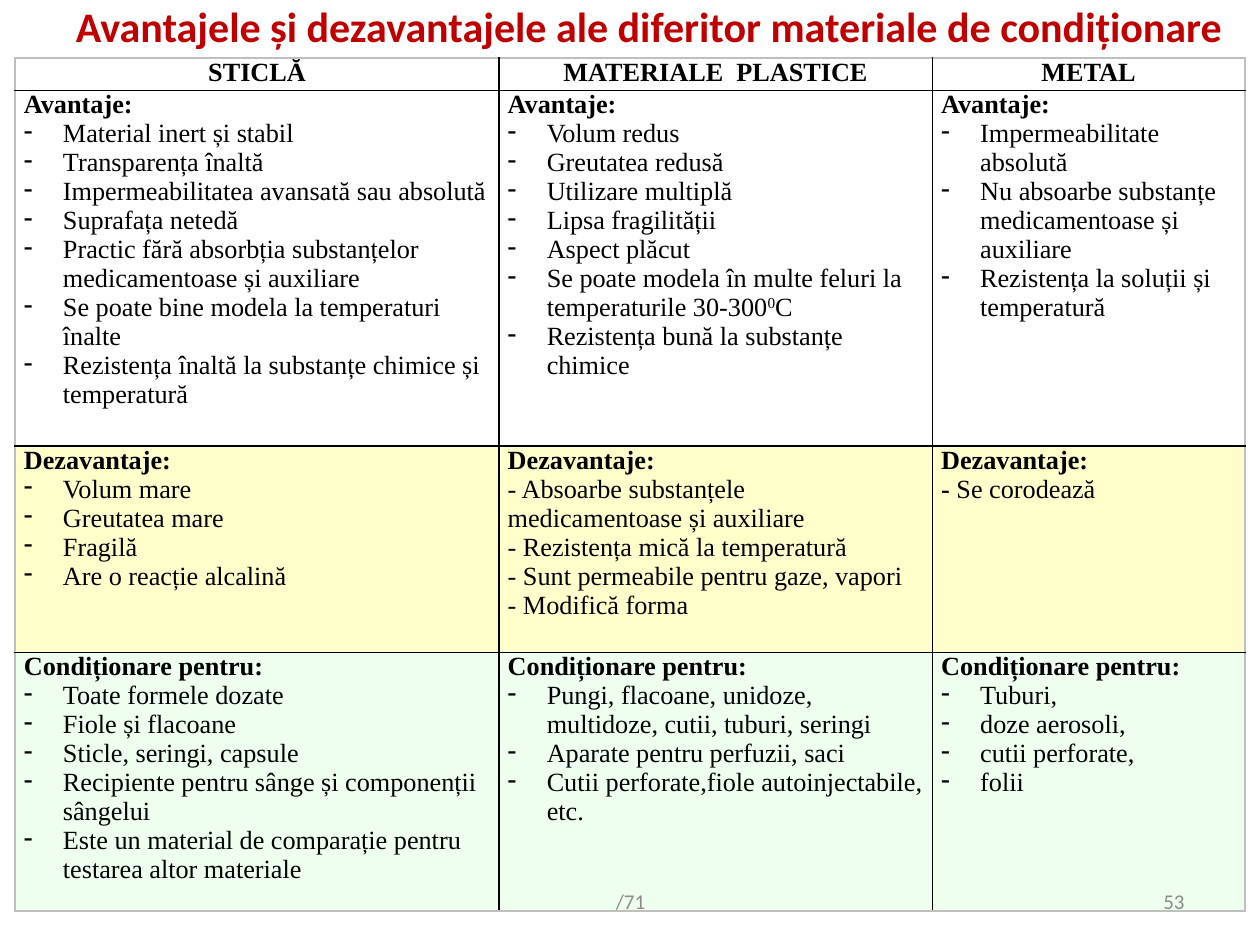
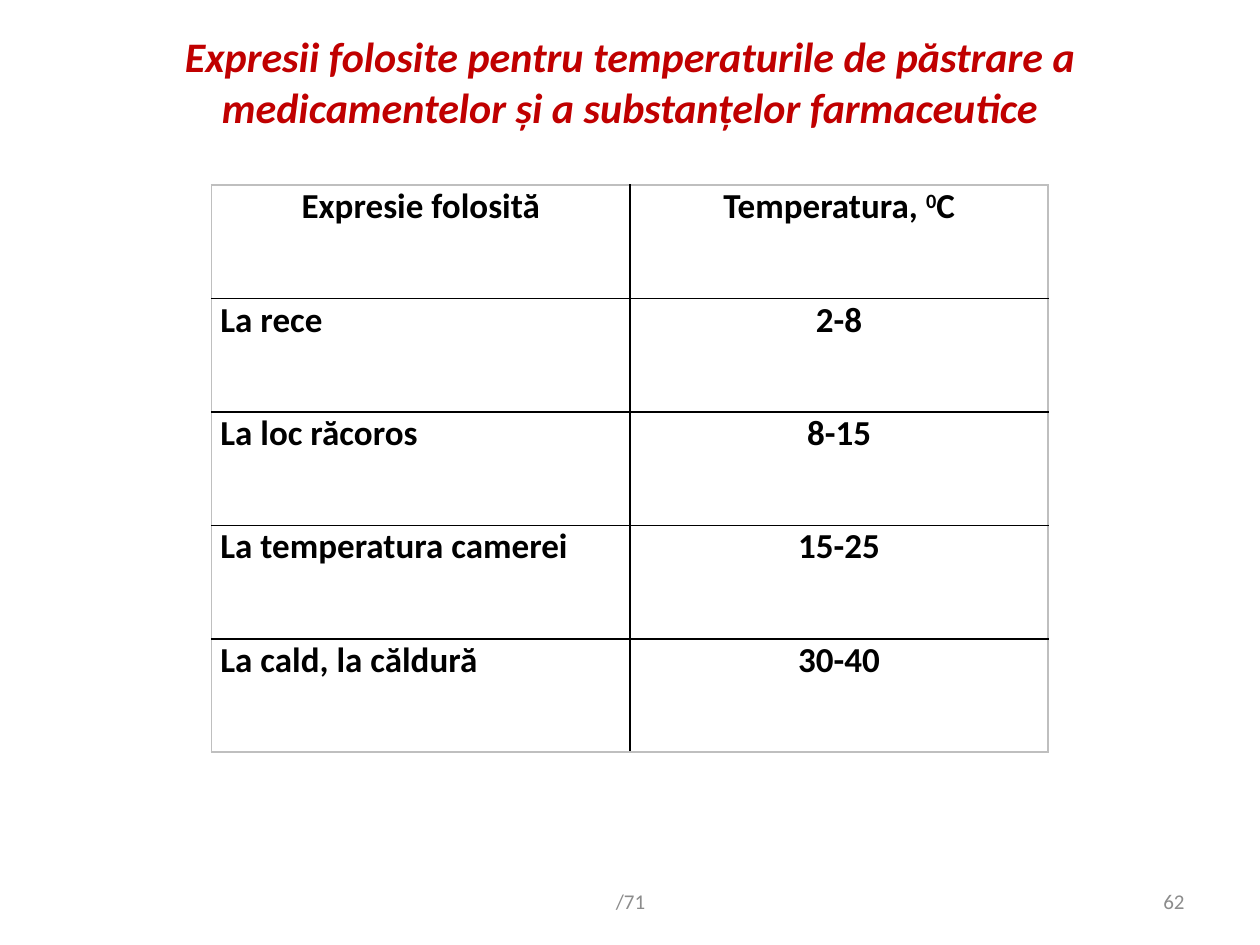
from lxml.etree import SubElement
from pptx import Presentation
from pptx.dml.color import RGBColor
from pptx.enum.text import MSO_ANCHOR, PP_ALIGN
from pptx.oxml import parse_xml
from pptx.oxml.ns import nsdecls, qn
from pptx.util import Inches, Pt

COLORS = {
    "title": "C00000",
    "text": "000000",
    "footer": "8C8C8C",
    "border": "000000",
    "outer_border": "BFBFBF",
    "disadvantages": "FFFFCC",
    "packaging": "EFFFEF",
}
TITLE = {"name": "Calibri", "size": 24, "bold": True, "color": "title"}
FOOTER = {"name": "Calibri", "size": 12, "color": "footer"}
MATERIALS = {"name": "Times New Roman", "size": 15, "bold": False, "color": "text"}
TEMPERATURES = {"name": "Calibri", "size": 20, "bold": True, "color": "text"}

BOLD = {"bold": True}
RAISED = {"baseline": 30}
BULLET = "• "  # marks a paragraph that gets a hanging dash
TOTAL_PAGES = "/71"


class SlideBuilder:
    """Holds the shared style and the slide being built."""

    def __init__(self):
        self.presentation = Presentation()
        self.presentation.slide_width = Inches(10)
        self.presentation.slide_height = Inches(7.5)
        self.slide = None

    def add_slide(self, page_number):
        layout = self.presentation.slide_layouts[6]
        self.slide = self.presentation.slides.add_slide(layout)
        self.page_number = page_number

    def add_run(self, paragraph, text, style):
        run = paragraph.add_run()
        run.text = text
        for key, value in style.items():
            if key == "color":
                run.font.color.rgb = RGBColor.from_string(COLORS[value])
            elif key == "baseline":
                run.font._element.set("baseline", str(value * 1000))
            else:
                setattr(run.font, key, Pt(value) if key == "size" else value)

    def add_dash(self, paragraph):
        properties = paragraph._p.get_or_add_pPr()
        properties.set("marL", str(Inches(0.31)))
        properties.set("indent", str(Inches(-0.31)))
        SubElement(properties, qn("a:buChar")).set("char", "-")

    def fill_text(self, frame, paragraphs, style, align=PP_ALIGN.LEFT):
        """A paragraph is a string or a list of (text, changes) runs."""
        for index, content in enumerate(paragraphs):
            paragraph = frame.add_paragraph() if index else frame.paragraphs[0]
            paragraph.alignment = align
            runs = [(content, {})] if isinstance(content, str) else content
            if runs[0][0].startswith(BULLET):
                self.add_dash(paragraph)
            for text, changes in runs:
                self.add_run(paragraph, text.removeprefix(BULLET), style | changes)

    def add_text(self, box, text, style, align=PP_ALIGN.CENTER):
        shape = self.slide.shapes.add_textbox(*map(Inches, box))
        frame = shape.text_frame
        frame.word_wrap = True
        frame.vertical_anchor = MSO_ANCHOR.MIDDLE
        self.fill_text(frame, [text], style, align)

    def add_title(self, box, text, **changes):
        self.add_text(box, text, TITLE | changes)

    def add_footer(self):
        self.add_text((7.17, 6.95, 2.33, 0.4), str(self.page_number), FOOTER, PP_ALIGN.RIGHT)
        self.add_text((3.42, 6.95, 3.17, 0.4), TOTAL_PAGES, FOOTER)

    def set_borders(self, cell, outer_sides):
        properties = cell._tc.get_or_add_tcPr()
        for index, side in enumerate("LRTB"):
            color = COLORS["outer_border" if side in outer_sides else "border"]
            properties.insert(index, parse_xml(
                f'<a:ln{side} {nsdecls("a")} w="{Pt(1)}"><a:solidFill>'
                f'<a:srgbClr val="{color}"/></a:solidFill></a:ln{side}>'))

    def add_table(self, left, top, widths, heights, rows, style,
                  row_fills=(), centered_columns=()):
        """Each cell in rows is a list of paragraphs; the first row is the header."""
        box = map(Inches, (left, top, sum(widths), sum(heights)))
        table = self.slide.shapes.add_table(len(rows), len(widths), *box).table
        table.first_row = table.horz_banding = False
        for column, width in zip(table.columns, widths):
            column.width = Inches(width)
        for row, height in zip(table.rows, heights):
            row.height = Inches(height)

        last_row, last_column = len(rows) - 1, len(widths) - 1
        for r, contents in enumerate(rows):
            for c, paragraphs in enumerate(contents):
                cell = table.cell(r, c)
                cell.margin_left = cell.margin_right = Inches(0.07)
                cell.margin_top = cell.margin_bottom = 0
                centered = r == 0 or c in centered_columns
                self.fill_text(cell.text_frame, paragraphs, style,
                               PP_ALIGN.CENTER if centered else PP_ALIGN.LEFT)
                fill = row_fills[r] if row_fills else None
                if fill:
                    cell.fill.solid()
                    cell.fill.fore_color.rgb = RGBColor.from_string(COLORS[fill])
                else:
                    cell.fill.background()
                edges = {"L": c == 0, "R": c == last_column,
                         "T": r == 0, "B": r == last_row}
                self.set_borders(cell, [side for side, outer in edges.items() if outer])


def heading(text):
    return [(text, BOLD)]


def bulleted(*items):
    return [[(BULLET + item, {})] if isinstance(item, str)
            else [(BULLET + item[0][0], item[0][1]), *item[1:]] for item in items]


def build_materials_slide(builder):
    builder.add_slide(53)
    builder.add_title((0.5, 0.05, 9.38, 0.31),
                      "Avantajele și dezavantajele ale diferitor materiale de condiționare ")

    header = [[heading(name)] for name in ("STICLĂ", "MATERIALE  PLASTICE", "METAL")]
    advantages = [
        bulleted("Material inert și stabil",
                 "Transparența înaltă",
                 "Impermeabilitatea avansată sau absolută",
                 "Suprafața netedă",
                 "Practic fără absorbția substanțelor medicamentoase și auxiliare",
                 "Se poate bine modela la temperaturi înalte",
                 "Rezistența înaltă la substanțe chimice și temperatură"),
        bulleted("Volum redus",
                 "Greutatea redusă",
                 "Utilizare multiplă",
                 "Lipsa fragilității",
                 "Aspect plăcut",
                 [("Se poate modela în multe feluri la temperaturile 30-300", {}),
                  ("0", RAISED), ("C", {})],
                 "Rezistența bună la substanțe chimice"),
        bulleted("Impermeabilitate absolută",
                 "Nu absoarbe substanțe medicamentoase și auxiliare",
                 "Rezistența la soluții și temperatură"),
    ]
    disadvantages = [
        bulleted("Volum mare", "Greutatea mare", "Fragilă", "Are o reacție alcalină"),
        ["- Absoarbe substanțele medicamentoase și auxiliare",
         "- Rezistența mică la temperatură",
         "- Sunt permeabile pentru gaze, vapori",
         "- Modifică forma"],
        [[("- ", BOLD), ("Se corodează", {})]],
    ]
    packaging = [
        bulleted("Toate formele dozate",
                 "Fiole și flacoane",
                 "Sticle, seringi, capsule",
                 "Recipiente pentru sânge și componenții sângelui",
                 "Este un material de comparație pentru testarea altor materiale"),
        bulleted("Pungi, flacoane, unidoze, multidoze, cutii, tuburi, seringi",
                 "Aparate pentru perfuzii, saci",
                 "Cutii perforate,fiole autoinjectabile, etc."),
        bulleted("Tuburi,", "doze aerosoli,", "cutii perforate,", "folii"),
    ]
    sections = {"Avantaje:": advantages,
                "Dezavantaje:": disadvantages,
                "Condiționare pentru:": packaging}
    rows = [header] + [[[heading(label), *items] for items in cells]
                       for label, cells in sections.items()]
    builder.add_table(0.12, 0.46, (3.84, 3.44, 2.48), (0.26, 2.82, 1.64, 2.05),
                      rows, MATERIALS,
                      row_fills=(None, None, "disadvantages", "packaging"))
    builder.add_footer()


def build_temperatures_slide(builder):
    builder.add_slide(62)
    builder.add_title((0.5, 0.3, 9, 0.69),
                      "Expresii folosite pentru temperaturile de păstrare a "
                      "medicamentelor și a substanțelor farmaceutice", italic=True)

    temperatures = {
        "Expresie folosită": [("Temperatura, ", {}), ("0", RAISED), ("C", {})],
        "La rece": "2-8",
        "La loc răcoros": "8-15",
        "La temperatura camerei": "15-25",
        "La cald, la căldură": "30-40",
    }
    rows = [[[expression], [value]] for expression, value in temperatures.items()]
    builder.add_table(1.68, 1.47, [3.32] * 2, [0.9] * len(rows), rows,
                      TEMPERATURES, centered_columns=(1,))
    builder.add_footer()


def main():
    builder = SlideBuilder()
    build_materials_slide(builder)
    build_temperatures_slide(builder)
    builder.presentation.save("out.pptx")


if __name__ == "__main__":
    main()
